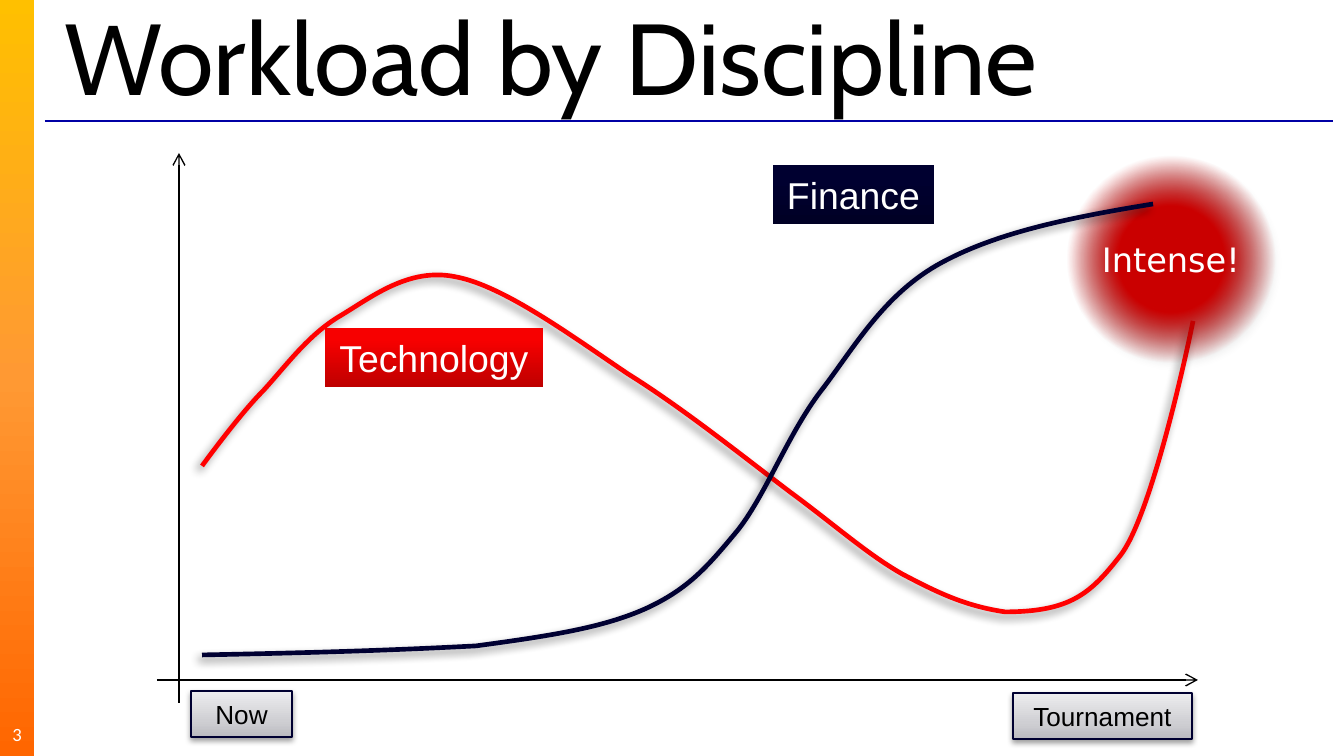
from dataclasses import dataclass

from lxml.etree import SubElement
from pptx import Presentation
from pptx.dml.color import RGBColor
from pptx.enum.shapes import MSO_CONNECTOR, MSO_SHAPE
from pptx.enum.text import MSO_ANCHOR, MSO_AUTO_SIZE, PP_ALIGN
from pptx.oxml.ns import qn
from pptx.util import Pt

PX = 914400 / 134.4


@dataclass(frozen=True)
class Theme:
    black: str = "000000"
    white: str = "FFFFFF"
    rule: str = "0000A5"
    red: str = "FF0000"
    navy: str = "000032"
    border: str = "000031"
    stripe: tuple = ((0, "FFC000"), (50, "FF9933"), (100, "FF6600"))
    red_fill: tuple = ((0, "BE0000"), (80, "F70000"), (100, "F80000"))
    navy_fill: tuple = ((0, "000025"), (80, "000030"), (100, "000031"))
    grey_fill: tuple = ((0, "BBBBC0"), (35, "CFCFD3"), (100, "EDEDEF"))
    glow_fill: tuple = ((31, "CC0000"), (61, "CC0000", 0))
    # Shadows: opacity %, blur pt, distance pt, direction in degrees
    curve_shadow: tuple = (45, 5, 3, 135)
    button_shadow: tuple = (38, 3.1, 1.6, 90)
    glow_shadow: tuple = (40, 4, 3, 45)
    title_size: int = 54
    label_size: int = 20
    glow_size: int = 18
    button_size: int = 14
    number_size: int = 10
    thin: float = 0.75
    thick: float = 2.5


THEME = Theme()

# Start point, then two control points and an end point per segment
TECHNOLOGY = [
    (45, 313),
    (45, 313), (82, 262), (106, 238),
    (129, 213), (151, 182), (183, 163),
    (215, 144), (252, 114), (299, 124),
    (347, 133), (416, 184), (471, 221),
    (527, 256), (588, 305), (633, 339),
    (679, 373), (710, 401), (745, 421),
    (781, 440), (808, 453), (848, 459),
    (914, 459), (934, 440), (963, 403),
    (991, 368), (1024, 227), (1036, 168),
]
FINANCE = [
    (45, 502),
    (145, 500), (222, 498), (319, 493),
    (393, 483), (445, 475), (488, 456),
    (532, 436), (551, 413), (581, 377),
    (610, 340), (632, 278), (667, 234),
    (700, 190), (729, 140), (784, 110),
    (839, 80), (910, 65), (996, 51),
]


def emu(*lengths):
    return [round(length * PX) for length in lengths]


def write(shape, text, *, size, color, font="Arial", align=PP_ALIGN.CENTER,
          wrap=True, fit=MSO_AUTO_SIZE.NONE, inset=None):
    frame = shape.text_frame
    frame.text = text
    frame.word_wrap = wrap
    frame.auto_size = fit
    frame.vertical_anchor = MSO_ANCHOR.MIDDLE
    if inset is not None:
        frame.margin_left = frame.margin_right = inset
        frame.margin_top = frame.margin_bottom = inset
    paragraph = frame.paragraphs[0]
    paragraph.alignment = align
    run_font = paragraph.runs[0].font
    run_font.name, run_font.size = font, Pt(size)
    run_font.color.rgb = RGBColor.from_string(color)


def add_color(parent, color, opacity=100):
    node = SubElement(parent, qn("a:srgbClr"), val=color)
    if opacity < 100:
        SubElement(node, qn("a:alpha"), val=str(opacity * 1000))


def gradient(shape, stops, angle=None):
    """Linear at the given angle, or circular from the centre without one."""
    shape.fill.gradient()
    fill = shape._element.spPr.find(qn("a:gradFill"))
    for child in list(fill):
        fill.remove(child)
    stop_list = SubElement(fill, qn("a:gsLst"))
    for position, *color in stops:
        add_color(SubElement(stop_list, qn("a:gs"), pos=str(position * 1000)), *color)
    if angle is None:
        circle = SubElement(fill, qn("a:path"), path="circle")
        SubElement(circle, qn("a:fillToRect"), {side: "50000" for side in "ltrb"})
    else:
        SubElement(fill, qn("a:lin"), ang=str(angle * 60000), scaled="0")


def outline(shape, color, width):
    shape.line.color.rgb = RGBColor.from_string(color)
    shape.line.width = Pt(width)


def cast_shadow(shape, opacity, blur, distance, direction):
    effects = shape._element.spPr.find(qn("a:effectLst"))
    shadow = SubElement(effects, qn("a:outerShdw"), blurRad=str(Pt(blur)),
                        dist=str(Pt(distance)), dir=str(direction * 60000),
                        rotWithShape="0")
    add_color(shadow, THEME.black, opacity)


def add_panel(slide, box, stops, *, angle=270, kind=MSO_SHAPE.RECTANGLE,
              border=None, shadow=None):
    panel = slide.shapes.add_shape(kind, *emu(*box))
    gradient(panel, stops, angle)
    if border:
        outline(panel, border, THEME.thin)
    else:
        panel.line.fill.background()
    panel.shadow.inherit = False
    if shadow:
        cast_shadow(panel, *shadow)
    return panel


def add_line(slide, start, end, color, arrow=False):
    line = slide.shapes.add_connector(MSO_CONNECTOR.STRAIGHT, *emu(*start, *end))
    outline(line, color, THEME.thin)
    if arrow:
        SubElement(line.line._get_or_add_ln(), qn("a:tailEnd"), type="arrow")
    SubElement(line._element.spPr, qn("a:effectLst"))


def add_curve(slide, origin, points, color):
    builder = slide.shapes.build_freeform(*points[0], scale=PX)
    builder.add_line_segments(points[1:], close=False)
    curve = builder.convert_to_shape(*emu(*origin))
    # Turn each three straight segments into one Bézier segment
    outline_path = next(curve._element.iter(qn("a:path")))
    segments = outline_path.findall(qn("a:lnTo"))
    for first in range(0, len(segments), 3):
        bezier = SubElement(outline_path, qn("a:cubicBezTo"))
        for segment in segments[first:first + 3]:
            bezier.append(segment[0])
            outline_path.remove(segment)
    curve.fill.background()
    outline(curve, color, THEME.thick)
    curve.shadow.inherit = False
    cast_shadow(curve, *THEME.curve_shadow)


def add_sidebar(slide, box):
    left, top, width, height = box
    add_panel(slide, box, THEME.stripe, angle=90)
    number = slide.shapes.add_textbox(*emu(left, top + height - 42, width, 40))
    write(number, "3", size=THEME.number_size, color=THEME.white,
          font="Calibri", inset=0)


def add_header(slide, box):
    left, top, width, height = box
    title = slide.shapes.title
    title.left, title.top, title.width, title.height = emu(left + 6, top + 20, width, 71)
    write(title, "Workload by Discipline", size=THEME.title_size,
          color=THEME.black, font="Cabin", align=PP_ALIGN.LEFT)
    add_line(slide, (left, top + height), (left + width, top + height), THEME.rule)


def add_workload_plot(slide, box):
    left, top, width, height = box

    def place(x, y, *size):
        return (left + x, top + y, *size)

    # Axes
    add_line(slide, place(0, 527), place(width, 527), THEME.black, arrow=True)
    add_line(slide, place(22, height), place(22, 0), THEME.black, arrow=True)

    add_curve(slide, (left, top), TECHNOLOGY, THEME.red)

    # Curve labels
    for text, x, y, label_width, stops in (
            ("Technology", 168, 175, 218, THEME.red_fill),
            ("Finance", 616, 12, 161, THEME.navy_fill)):
        label = add_panel(slide, place(x, y, label_width, 59), stops)
        write(label, text, size=THEME.label_size, color=THEME.white,
              wrap=False, fit=MSO_AUTO_SIZE.SHAPE_TO_FIT_TEXT)

    # Ends of the time axis
    for text, x, y, button_width in (("Now", 34, 538, 101),
                                     ("Tournament", 856, 540, 179)):
        button = add_panel(slide, place(x, y, button_width, 46), THEME.grey_fill,
                           border=THEME.border, shadow=THEME.button_shadow)
        write(button, text, size=THEME.button_size, color=THEME.black,
              fit=MSO_AUTO_SIZE.SHAPE_TO_FIT_TEXT)

    # Glow behind the end of the finance curve
    glow = add_panel(slide, place(891, -11, 246, 235), THEME.glow_fill, angle=None,
                     kind=MSO_SHAPE.OVAL, shadow=THEME.glow_shadow)
    write(glow, "Intense!", size=THEME.glow_size, color=THEME.white, font="DejaVu Sans")

    add_curve(slide, (left, top), FINANCE, THEME.navy)


def main():
    deck = Presentation()
    deck.slide_width, deck.slide_height = emu(1344, 756)
    slide = deck.slides.add_slide(deck.slide_layouts[5])
    add_sidebar(slide, (0, 0, 34, 756))
    add_header(slide, (45, 0, 1288, 121))
    add_workload_plot(slide, (157, 153, 1041, 550))
    deck.save("out.pptx")


if __name__ == "__main__":
    main()
